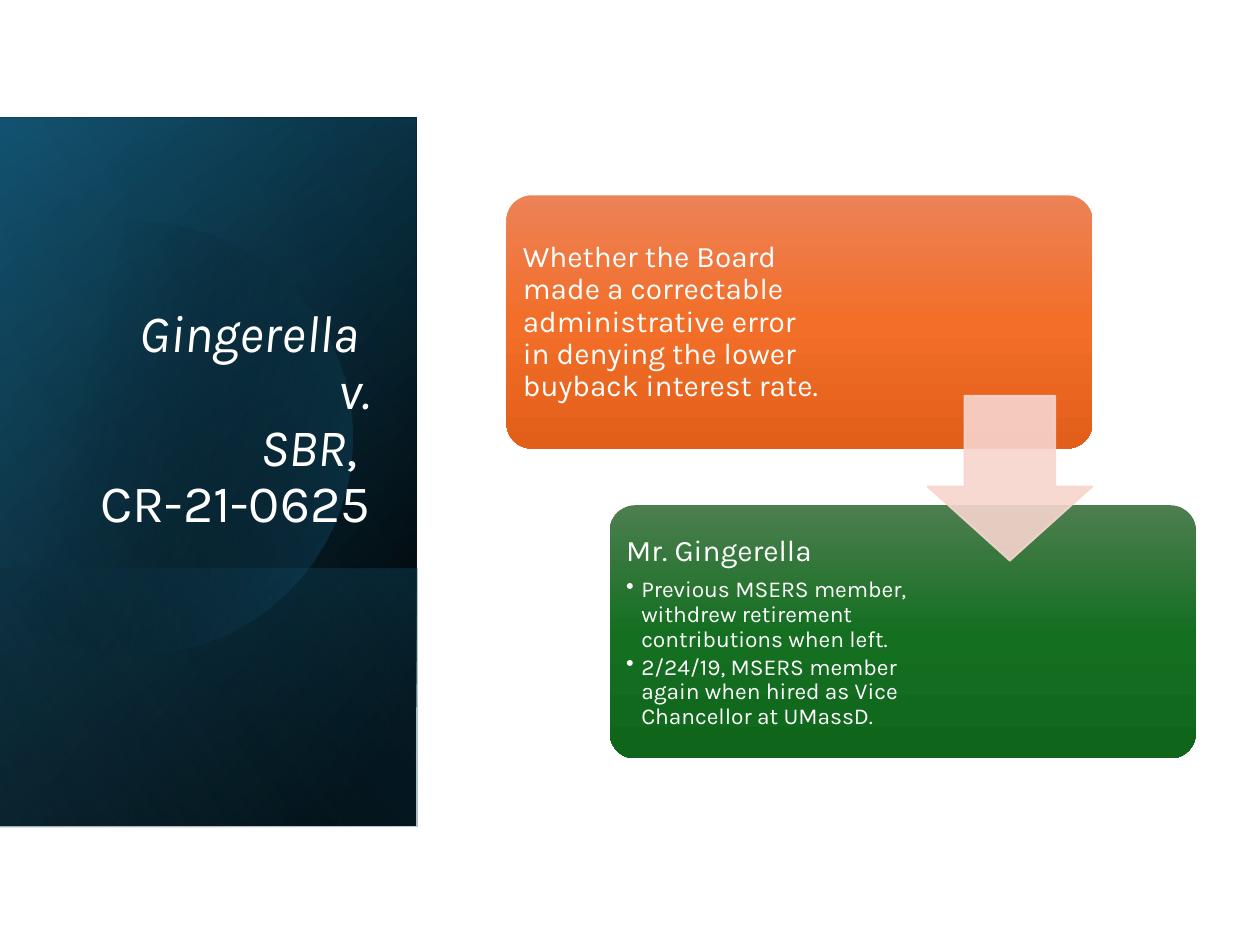
import pptx
import pptx.util
import pptx.dml.color
import pptx.enum.shapes
import pptx.enum.text
import pptx.oxml
import pptx.oxml.ns
from lxml import etree

Inches = pptx.util.Inches
Pt = pptx.util.Pt
SHAPES = pptx.enum.shapes.MSO_SHAPE
ANCHOR = pptx.enum.text.MSO_ANCHOR
qn = pptx.oxml.ns.qn

FONT = "Karla"
COLORS = {
    "white": "FFFFFF", "black": "000000", "navy": "104862", "teal": "156082",
    "sky": "46B1E1", "arrow": "F7D5CE",
    "orange_top": "ED8257", "orange_mid": "F26E29", "orange_low": "E25F1A",
    "green_top": "4D7E50", "green_mid": "156F21", "green_low": "0F661B",
}

# Side panel layers: left, top, width, height, angle, (position, colour, opacity)
PANEL_LAYERS = [
    (-1.16, 2.09, 5.62, 3.31, 50, [(8, "black", 100), (100, "navy", 100)]),
    (-1.16, 2.1, 5.62, 3.31, 30, [(0, "black", 0), (99, "teal", 46)]),
    (0.63, 3.88, 2.05, 3.31, 130, [(2, "teal", 29), (100, "black", 30)]),
]
PANEL_GLOW = (-1.16, 2.09, 5.63, 3.31, 120, [(0, "black", 0), (99, "sky", 11)])

# Outline of the round glow: a start point, then cubic curves or straight lines
BLOB_START = (1.11, 1.76)
BLOB_SEGMENTS = [
    [(1.85, 1.78), (2.51, 2.26), (2.73, 3)],
    [(2.99, 3.91), (2.46, 4.86), (1.55, 5.13)],
    [(0.98, 5.29), (0.4, 5.15), (-0.02, 4.79)],
    [(-0.11, 4.71)], [(-0.11, 2.25)], [(0, 2.15)],
    [(0.17, 2.01), (0.38, 1.9), (0.6, 1.83)],
    [(0.77, 1.78), (0.95, 1.76), (1.11, 1.76)],
]


def color(name):
    return pptx.dml.color.RGBColor.from_string(COLORS[name])


def set_opacity(fill_element, percent):
    rgb = fill_element.find(".//" + qn("a:srgbClr"))
    etree.SubElement(rgb, qn("a:alpha")).set("val", str(percent * 1000))


def set_gradient(shape, angle, stops):
    """Fill with a linear gradient whose stops carry an opacity."""
    shape.shadow.inherit = False
    shape.line.fill.background()
    shape.fill.gradient()
    gradient = shape._element.spPr.find(qn("a:gradFill"))
    gradient.set("rotWithShape", "1")
    for child in list(gradient):
        gradient.remove(child)
    stop_list = etree.SubElement(gradient, qn("a:gsLst"))
    for position, name, opacity in stops:
        stop = etree.SubElement(stop_list, qn("a:gs"), pos=str(position * 1000))
        etree.SubElement(stop, qn("a:srgbClr"), val=COLORS[name])
        if opacity < 100:
            set_opacity(stop, opacity)
    etree.SubElement(gradient, qn("a:lin"), ang=str(angle * 60000), scaled="0")


def add_panel_layer(slide, left, top, width, height, angle, stops):
    shape = slide.shapes.add_shape(
        SHAPES.RECTANGLE, Inches(left), Inches(top), Inches(width), Inches(height))
    shape.rotation = 90
    shape._element.spPr.find(qn("a:xfrm")).set("flipH", "1")
    set_gradient(shape, angle, stops)


def curve_points(start, controls, steps=16):
    points = [start] + controls
    for step in range(1, steps + 1):
        t = step / steps
        weights = ((1 - t) ** 3, 3 * t * (1 - t) ** 2, 3 * t * t * (1 - t), t ** 3)
        yield tuple(sum(w * point[axis] for w, point in zip(weights, points))
                    for axis in (0, 1))


def add_blob(slide):
    outline = [BLOB_START]
    for segment in BLOB_SEGMENTS:
        outline += curve_points(outline[-1], segment) if len(segment) == 3 else segment
    vertices = [(Inches(x), Inches(y)) for x, y in outline]
    builder = slide.shapes.build_freeform(*vertices[0])
    builder.add_line_segments(vertices[1:], close=True)
    set_gradient(builder.convert_to_shape(), 14, [(29, "black", 0), (100, "teal", 43)])


def style_paragraph(paragraph, size, space_after=0):
    paragraph.line_spacing = 0.9
    paragraph.space_after = Pt(space_after)
    paragraph.font.name = FONT
    paragraph.font.size = Pt(size)
    paragraph.font.color.rgb = color("white")


def add_title(slide):
    title = slide.shapes.title
    title.left, title.top = Inches(0.48), Inches(2.32)
    title.width, title.height = Inches(2.56), Inches(1.97)
    frame = title.text_frame
    frame.word_wrap = True
    frame.auto_size = pptx.enum.text.MSO_AUTO_SIZE.NONE
    frame.vertical_anchor = ANCHOR.BOTTOM
    paragraph = frame.paragraphs[0]
    paragraph.alignment = pptx.enum.text.PP_ALIGN.RIGHT
    style_paragraph(paragraph, 30)
    lines = [[("Gingerella ", True)], [("v.", True)],
             [(" SBR", True), (", ", False)], [("CR-21-0625", False)]]
    for index, line in enumerate(lines):
        if index:
            paragraph.add_line_break()
        for text, italic in line:
            run = paragraph.add_run()
            run.text = text
            run.font.italic = italic
    # Bring the title in front of the panel
    slide.shapes._spTree.append(title._element)


def add_bullet(paragraph):
    properties = paragraph._p.get_or_add_pPr()
    properties.set("marL", str(Inches(0.12)))
    properties.set("indent", str(-Inches(0.12)))
    etree.SubElement(properties, qn("a:buChar"), char="•")


def add_card(slide, left, top, text_width, shade, heading, bullets=()):
    card = slide.shapes.add_shape(
        SHAPES.ROUNDED_RECTANGLE, Inches(left), Inches(top), Inches(4.65), Inches(2.01))
    card.adjustments[0] = 0.1
    set_gradient(card, 90, [(0, shade + "_top", 100), (50, shade + "_mid", 100),
                            (100, shade + "_low", 100)])

    box = slide.shapes.add_textbox(
        Inches(left + 0.06), Inches(top + 0.06), Inches(text_width), Inches(1.9))
    frame = box.text_frame
    frame.word_wrap = True
    frame.vertical_anchor = ANCHOR.MIDDLE
    frame.margin_left = frame.margin_right = Inches(0.07)
    frame.margin_top = frame.margin_bottom = Inches(0.07)
    frame.paragraphs[0].text = heading
    style_paragraph(frame.paragraphs[0], 17, 6)
    for text in bullets:
        paragraph = frame.add_paragraph()
        paragraph.text = text
        paragraph.level = 1
        add_bullet(paragraph)
        style_paragraph(paragraph, 13, 2)


def add_down_arrow(slide):
    arrow = slide.shapes.add_shape(
        SHAPES.DOWN_ARROW, Inches(7.36), Inches(3.14), Inches(1.31), Inches(1.31))
    arrow.adjustments[0] = 0.55
    arrow.adjustments[1] = 0.45
    arrow.shadow.inherit = False
    arrow.line.width = Pt(1)
    for fill in (arrow.fill, arrow.line.fill):
        fill.solid()
        fill.fore_color.rgb = color("arrow")
    properties = arrow._element.spPr
    for parent in (properties, properties.find(qn("a:ln"))):
        set_opacity(parent.find(qn("a:solidFill")), 90)


def main():
    presentation = pptx.Presentation()
    presentation.slide_width, presentation.slide_height = Inches(10), Inches(7.5)
    slide = presentation.slides.add_slide(presentation.slide_layouts[5])

    # Side panel with the case name
    for layer in PANEL_LAYERS:
        add_panel_layer(slide, *layer)
    add_blob(slide)
    add_panel_layer(slide, *PANEL_GLOW)
    add_title(slide)

    # Issue, then the facts
    add_card(slide, 4.02, 1.55, 2.57, "orange",
             "Whether the Board made a correctable administrative error "
             "in denying the lower buyback interest rate.")
    add_card(slide, 4.84, 4.01, 2.4, "green", "Mr. Gingerella", [
        "Previous MSERS member, withdrew retirement contributions when left.",
        "2/24/19, MSERS member again when hired as Vice Chancellor at UMassD."])
    add_down_arrow(slide)

    presentation.save("out.pptx")


if __name__ == "__main__":
    main()
